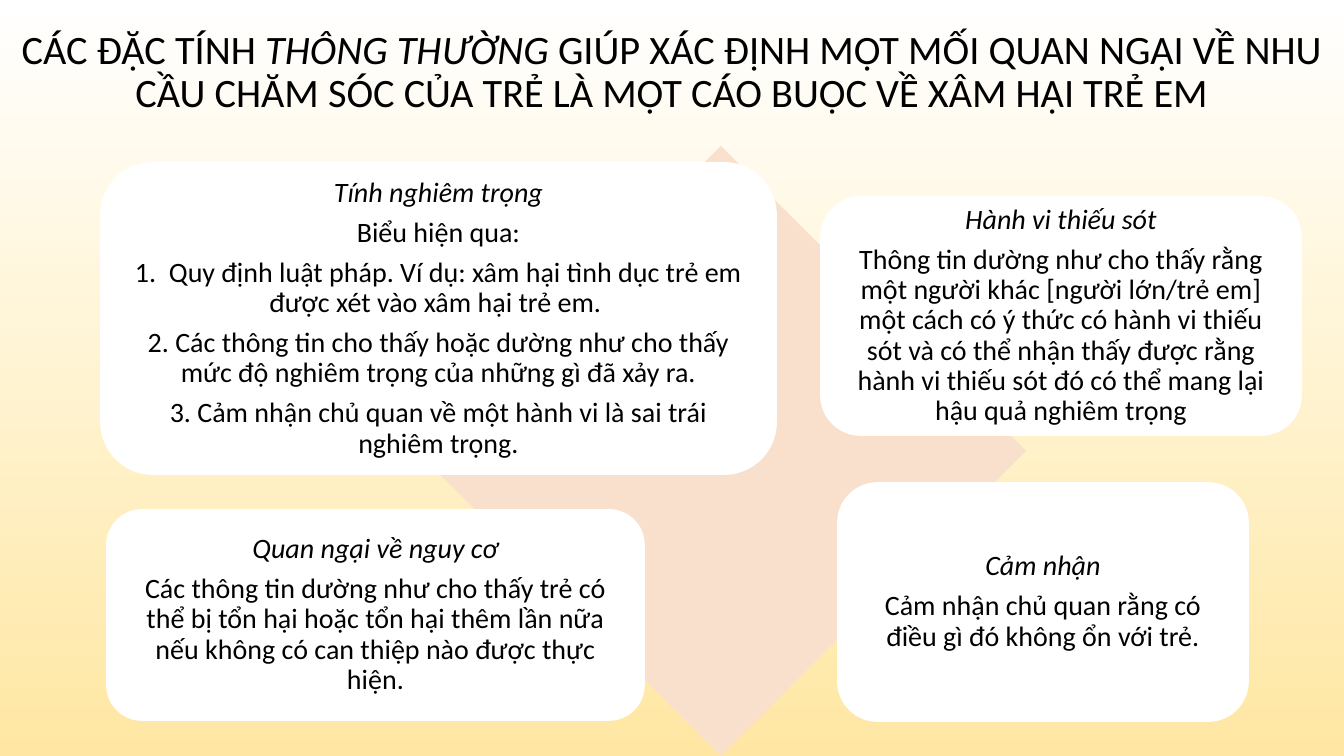
"""Build a slide on the traits that mark a child care concern as an abuse allegation."""
import pptx
import pptx.util
import pptx.dml.color
import pptx.enum.shapes
import pptx.enum.text

RGBColor = pptx.dml.color.RGBColor
BLACK = RGBColor(0x00, 0x00, 0x00)
WHITE = RGBColor(0xFF, 0xFF, 0xFF)
GOLD = RGBColor(0xFF, 0xE7, 0xA3)
PEACH = RGBColor(0xF9, 0xE0, 0xCD)
Pt = pptx.util.Pt
SHAPE = pptx.enum.shapes.MSO_SHAPE
SCALE = 914400 / 100.8


def px(*sizes):
    """Turn pixel lengths into EMU."""
    return [pptx.util.Emu(round(size * SCALE)) for size in sizes]


def write(para, text, size, slant=False):
    """Add one run to a centred paragraph."""
    para.alignment = pptx.enum.text.PP_ALIGN.CENTER
    para.line_spacing = 0.9
    run = para.add_run()
    run.text = text
    run.font.name = "Calibri"
    run.font.size = Pt(size)
    run.font.italic = slant
    run.font.color.rgb = BLACK


deck = pptx.Presentation()
deck.slide_width, deck.slide_height = px(1344, 756)
slide = deck.slides.add_slide(deck.slide_layouts[5])

back = slide.background.fill
back.gradient()
back.gradient_angle = 270
for stop, color in zip(back.gradient_stops, (WHITE, GOLD)):
    stop.color.rgb = color

title = slide.shapes.title
title.left, title.top, title.width, title.height = px(0, 0, 1344, 146)
frame = title.text_frame
frame.auto_size = pptx.enum.text.MSO_AUTO_SIZE.NONE
frame.vertical_anchor = pptx.enum.text.MSO_ANCHOR.MIDDLE
for text, slant in (
    ("CÁC ĐẶC TÍNH ", False),
    ("THÔNG THƯỜNG ", True),
    ("GIÚP XÁC ĐỊNH MỘT MỐI QUAN NGẠI VỀ NHU CẦU CHĂM SÓC CỦA TRẺ "
     "LÀ MỘT CÁO BUỘC VỀ XÂM HẠI TRẺ EM", False),
):
    write(frame.paragraphs[0], text, 28.8, slant)

diamond = slide.shapes.add_shape(SHAPE.DIAMOND, *px(416, 146, 610, 610))
diamond.shadow.inherit = False
diamond.fill.solid()
diamond.fill.fore_color.rgb = PEACH
diamond.line.fill.background()

CARDS = (
    ((101, 163, 675, 311), "Tính nghiêm trọng", (
        "Biểu hiện qua:",
        "1.  Quy định luật pháp. Ví dụ: xâm hại tình dục trẻ em được xét vào xâm hại trẻ em. ",
        "2. Các thông tin cho thấy hoặc dường như cho thấy mức độ nghiêm trọng "
        "của những gì đã xảy ra.",
        "3. Cảm nhận chủ quan về một hành vi là sai trái nghiêm trọng.",
    )),
    ((821, 197, 480, 238), "Hành vi thiếu sót", (
        "Thông tin dường như cho thấy rằng một người khác [người lớn/trẻ em] "
        "một cách có ý thức có hành vi thiếu sót và có thể nhận thấy được rằng "
        "hành vi thiếu sót đó có thể mang lại hậu quả nghiêm trọng",
    )),
    ((107, 510, 537, 210), "Quan ngại về nguy cơ", (
        "Các thông tin dường như cho thấy trẻ có thể bị tổn hại hoặc tổn hại "
        "thêm lần nữa nếu không có can thiệp nào được thực hiện.",
    )),
    ((838, 483, 410, 238), "Cảm nhận", (
        "Cảm nhận chủ quan rằng có điều gì đó không ổn với trẻ.",
    )),
)

for box, head, lines in CARDS:
    card = slide.shapes.add_shape(SHAPE.ROUNDED_RECTANGLE, *px(*box))
    card.shadow.inherit = False
    card.fill.solid()
    card.fill.fore_color.rgb = WHITE
    card.line.color.rgb = WHITE
    card.line.width = Pt(1.25)
    frame = card.text_frame
    frame.word_wrap = True
    frame.vertical_anchor = pptx.enum.text.MSO_ANCHOR.MIDDLE
    (frame.margin_left, frame.margin_top,
     frame.margin_right, frame.margin_bottom) = px(8, 8, 8, 8)
    para = frame.paragraphs[0]
    para.space_after = Pt(7)
    write(para, head, 20, True)
    for line in lines:
        para = frame.add_paragraph()
        para.space_after = Pt(7)
        write(para, line, 20)

deck.save("out.pptx")
